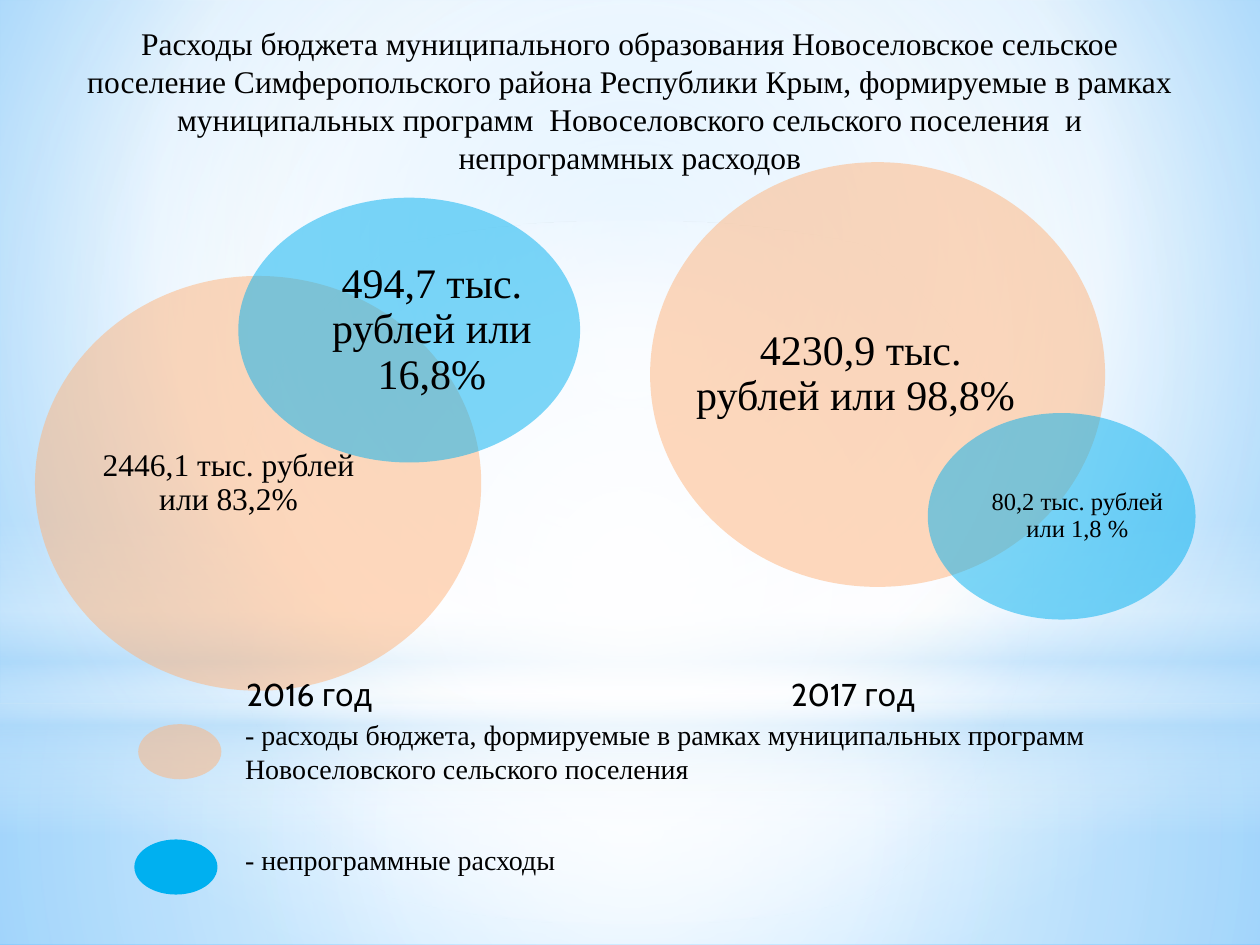
from dataclasses import dataclass

from lxml import etree
from pptx import Presentation
from pptx.dml.color import RGBColor
from pptx.enum.shapes import MSO_SHAPE
from pptx.enum.text import MSO_ANCHOR, MSO_AUTO_SIZE, PP_ALIGN
from pptx.oxml.ns import qn
from pptx.slide import Slide
from pptx.util import Pt

RECTANGLE, OVAL = MSO_SHAPE.RECTANGLE, MSO_SHAPE.OVAL
LEFT, CENTER = PP_ALIGN.LEFT, PP_ALIGN.CENTER
MIDDLE = MSO_ANCHOR.MIDDLE
GROW = MSO_AUTO_SIZE.SHAPE_TO_FIT_TEXT

BLACK = RGBColor(0x00, 0x00, 0x00)
WHITE = RGBColor(0xFF, 0xFF, 0xFF)
PEACH = RGBColor(0xFF, 0xB3, 0x7A)
BLUE = RGBColor(0x00, 0xB0, 0xF0)
SKY = RGBColor(0x9E, 0xD5, 0xFF)
DEEP_SKY = RGBColor(0x5B, 0xB9, 0xFF)
MIST = RGBColor(0xB4, 0xDC, 0xFA)

CENTERED = (50, 50, 50, 50)
ROUNDNESS = 0.55


def write(frame, text, size=18, font="Times New Roman", align=LEFT, spacing=None):
    frame.word_wrap = True
    para = frame.paragraphs[0]
    para.alignment = align
    if spacing:
        para.line_spacing = spacing
    span = para.add_run()
    span.text = text
    span.font.size = Pt(size)
    span.font.name = font
    span.font.color.rgb = BLACK


def add_color(parent, color, opacity):
    node = etree.SubElement(parent, qn("a:srgbClr"), val=str(color))
    if opacity < 100:
        etree.SubElement(node, qn("a:alpha"), val=str(opacity * 1000))


def replace_fill(element, stops, focus=None):
    solid = next(element.iter(qn("a:solidFill")))
    gradient = etree.Element(qn("a:gradFill"), rotWithShape="1")
    stop_list = etree.SubElement(gradient, qn("a:gsLst"))
    for position, color, opacity in stops:
        stop = etree.SubElement(stop_list, qn("a:gs"), pos=str(position * 1000))
        add_color(stop, color, opacity)
    if focus:
        circle = etree.SubElement(gradient, qn("a:path"), path="circle")
        sides = {side: str(share * 1000) for side, share in zip("ltrb", focus)}
        etree.SubElement(circle, qn("a:fillToRect"), **sides)
    else:
        etree.SubElement(gradient, qn("a:lin"), ang="5400000", scaled="0")
    solid.getparent().replace(solid, gradient)


def round_corners(shape):
    center = (shape.width / 2, shape.height / 2)
    start = (0, center[1])
    for line in list(shape.element.iter(qn("a:lnTo"))):
        end = tuple(int(line[0].get(axis)) for axis in "xy")
        corner = [a + b - c for a, b, c in zip(start, end, center)]
        controls = [
            [a + ROUNDNESS * (c - a) for a, c in zip(point, corner)]
            for point in (start, end)
        ]
        curve = etree.Element(qn("a:cubicBezTo"))
        for x, y in (*controls, end):
            etree.SubElement(curve, qn("a:pt"), x=str(round(x)), y=str(round(y)))
        line.getparent().replace(line, curve)
        start = end


@dataclass
class Painter:
    page: Slide

    def backdrop(self, stops, focus):
        fill = self.page.background.fill
        fill.solid()
        fill.fore_color.rgb = WHITE
        replace_fill(self.page.element, stops, focus)

    def paint(self, shape, color, opacity=100):
        shape.shadow.inherit = False
        shape.line.fill.background()
        shape.fill.solid()
        shape.fill.fore_color.rgb = color
        if opacity < 100:
            solid = next(shape.element.iter(qn("a:solidFill")))
            solid.clear()
            add_color(solid, color, opacity)

    def shape(self, kind, place, color, opacity=100):
        shape = self.page.shapes.add_shape(kind, *map(Pt, place))
        self.paint(shape, color, opacity)
        return shape

    def master_glow(self, kind, place, stops, focus=None):
        element = self.shape(kind, place, WHITE).element
        replace_fill(element, stops, focus)
        master = self.page.slide_layout.slide_master
        tree = next(master.element.iter(qn("p:spTree")))
        next(element.iter(qn("p:cNvPr"))).set("id", str(100 + len(tree)))
        tree.append(element)

    def bubble(self, place, color, text, size, insets):
        left, top, width, height = map(Pt, place)
        middle, center = top + height // 2, left + width // 2
        builder = self.page.shapes.build_freeform(left, middle)
        builder.add_line_segments(
            [(center, top), (left + width, middle),
             (center, top + height), (left, middle)],
            close=True)
        shape = builder.convert_to_shape()
        round_corners(shape)
        self.paint(shape, color, 50)
        frame = shape.text_frame
        frame.vertical_anchor = MIDDLE
        frame.margin_left, frame.margin_right = map(Pt, insets)
        frame.margin_top = frame.margin_bottom = 0
        write(frame, text, size=size, align=CENTER, spacing=0.9)

    def text(self, place, text, **style):
        box = self.page.shapes.add_textbox(*map(Pt, place))
        write(box.text_frame, text, **style)
        box.text_frame.auto_size = GROW


def main():
    deck = Presentation()
    deck.slide_width, deck.slide_height = Pt(720), Pt(540)
    painter = Painter(deck.slides.add_slide(deck.slide_layouts[6]))

    painter.backdrop(
        [(0, SKY, 100), (60, WHITE, 100), (100, DEEP_SKY, 100)], (20, 10, 20, 60))
    painter.master_glow(RECTANGLE, (0, 402, 720, 138),
                        [(0, WHITE, 91), (37, WHITE, 76), (100, MIST, 79)], CENTERED)
    painter.master_glow(RECTANGLE, (0, 0, 720, 402),
                        [(0, WHITE, 89), (48, WHITE, 62), (100, MIST, 79)], CENTERED)
    painter.master_glow(RECTANGLE, (0, 297, 720, 180),
                        [(0, WHITE, 0), (29, WHITE, 30), (45, MIST, 40),
                         (55, WHITE, 26), (65, MIST, 60), (100, WHITE, 0)])
    painter.master_glow(OVAL, (0, 126, 720, 402),
                        [(0, WHITE, 100), (56, WHITE, 0)], CENTERED)

    painter.text(
        (34, 10.3, 652, 94.3),
        "Расходы бюджета муниципального образования Новоселовское сельское "
        "поселение Симферопольского района Республики Крым, формируемые в рамках "
        "муниципальных программ  Новоселовского сельского поселения  и "
        "непрограммных расходов",
        align=CENTER)

    bubbles = [
        ((371.5, 92.7, 260, 242.7), PEACH, " 4230,9 тыс. рублей или 98,8%", 24, (24.5, 49.7)),
        ((530.2, 236, 153, 118), BLUE, "80,2 тыс. рублей или 1,8 %", 14, (35.3, 17.3)),
        ((20, 157.7, 255, 237), PEACH, "2446,1 тыс. рублей или 83,2%", 18, (32.4, 66.2)),
        ((136.2, 113, 195.3, 151.3), BLUE, "494,7 тыс. рублей или 16,8%", 24, (50.4, 24.5)),
    ]
    for bubble in bubbles:
        painter.bubble(*bubble)

    painter.shape(OVAL, (79, 413.8, 47.5, 31.5), PEACH, 50)
    painter.text(
        (133, 406.6, 556, 46),
        "- расходы бюджета, формируемые в рамках муниципальных программ "
        "Новоселовского сельского поселения",
        size=16)
    painter.shape(OVAL, (76.8, 479.7, 47.5, 31.5), BLUE)
    painter.text((133, 478, 487, 27), "- непрограммные расходы", size=16)

    painter.text((84.3, 382.4, 185, 29), "2016 год", font="Cabin", align=CENTER)
    painter.text((445, 382.4, 235.4, 29), "2017 год", font="Cabin")

    deck.save("out.pptx")


if __name__ == "__main__":
    main()
